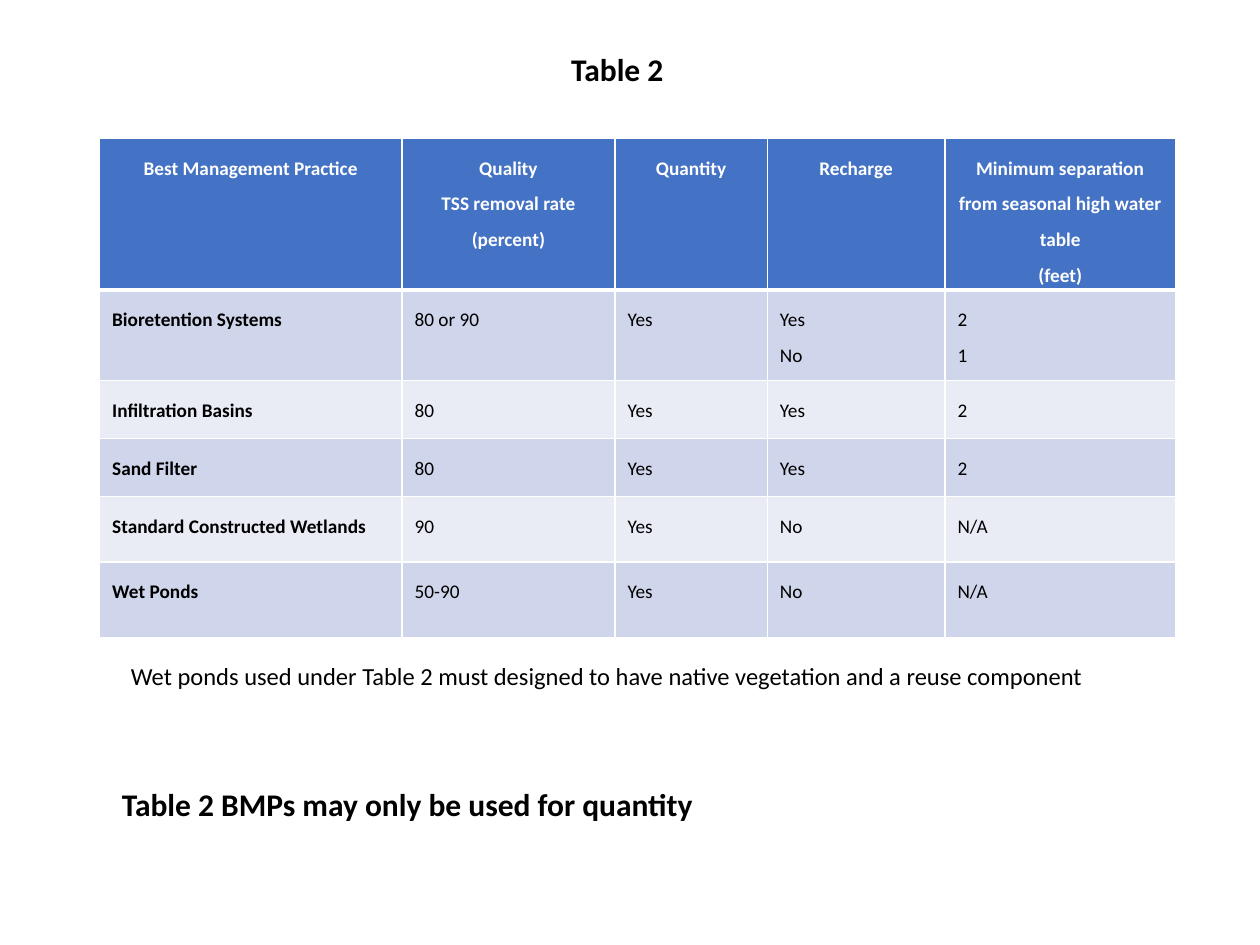
from pptx import Presentation
from pptx.dml.color import RGBColor
from pptx.enum import text as t
from pptx.oxml import parse_xml
from pptx.oxml.ns import nsdecls
from pptx.util import Pt

HEAD = ["Best Management Practice", "Quality\nTSS removal rate (percent)", "Quantity",
        "Recharge", "Minimum separation from seasonal high water table\n(feet)"]
BODY = [
    ["Bioretention Systems", "80 or 90", "Yes", "Yes\nNo", "2\n1"],
    ["Infiltration Basins", "80", "Yes", "Yes", "2"],
    ["Sand Filter", "80", "Yes", "Yes", "2"],
    ["Standard Constructed Wetlands", "90", "Yes", "No", "N/A"],
    ["Wet Ponds", "50-90", "Yes", "No", "N/A"],
]
WIDE = [172.8, 121.7, 87.1, 101.5, 131.8]
HIGH = [82, 51.8, 33.1, 33.1, 37.4, 43.2]
BANDS = ["E9EBF5", "CFD5EA"]
NOTES = [
    ("Wet ponds used under Table 2 must designed to have native vegetation and a reuse component",
     (67.7, 374.4, 614.9, 24.5), 14, False),
    ("Table 2 BMPs may only be used for quantity", (62.6, 445, 393.8, 28.8), 18, True),
]


def color(code):
    return RGBColor.from_string(code)


def write(frame, words, size=11, bold=False, ink="000000", align=t.PP_ALIGN.LEFT, space=1.0):
    frame.word_wrap = True
    frame.text = words
    for para in frame.paragraphs:
        para.alignment = align
        para.line_spacing = space
        for run in para.runs:
            font = run.font
            font.name, font.size, font.bold = "Calibri", Pt(size), bold
            font.color.rgb = color(ink)


def edge(cell, low):
    props = cell._tc.get_or_add_tcPr()
    sides = {"lnL": 1, "lnR": 1, "lnT": 1, "lnB": low}
    for spot, (tag, size) in enumerate(sides.items()):
        props.insert(spot, parse_xml(
            f'<a:{tag} {nsdecls("a")} w="{Pt(size)}"><a:solidFill>'
            f'<a:srgbClr val="FFFFFF"/></a:solidFill></a:{tag}>'))


def grid(slide):
    rows = [HEAD] + BODY
    box = map(Pt, (56.9, 79.2, sum(WIDE), sum(HIGH)))
    table = slide.shapes.add_table(len(rows), len(HEAD), *box).table
    for col, width in zip(table.columns, WIDE):
        col.width = Pt(width)
    for row, height in zip(table.rows, HIGH):
        row.height = Pt(height)
    for r, row in enumerate(rows):
        for c, words in enumerate(row):
            cell = table.cell(r, c)
            head = r == 0
            cell.fill.solid()
            cell.fill.fore_color.rgb = color("4472C4" if head else BANDS[r % 2])
            edge(cell, 3 if r == 0 else 1)
            write(cell.text_frame, words, bold=head or c == 0, space=1.5,
                  ink="FFFFFF" if head else "000000",
                  align=t.PP_ALIGN.CENTER if head else t.PP_ALIGN.LEFT)


def main():
    deck = Presentation()
    deck.slide_width, deck.slide_height = Pt(720), Pt(540)
    slide = deck.slides.add_slide(deck.slide_layouts[5])
    title = slide.shapes.title
    title.left, title.top, title.width, title.height = map(Pt, (265.7, 25.2, 174.2, 28.8))
    write(title.text_frame, "Table 2", size=18, bold=True, align=t.PP_ALIGN.CENTER)
    title.text_frame.auto_size = t.MSO_AUTO_SIZE.SHAPE_TO_FIT_TEXT
    grid(slide)
    for words, box, size, bold in NOTES:
        frame = slide.shapes.add_textbox(*map(Pt, box)).text_frame
        write(frame, words, size=size, bold=bold)
        frame.auto_size = t.MSO_AUTO_SIZE.SHAPE_TO_FIT_TEXT
    deck.save("out.pptx")


if __name__ == "__main__":
    main()
